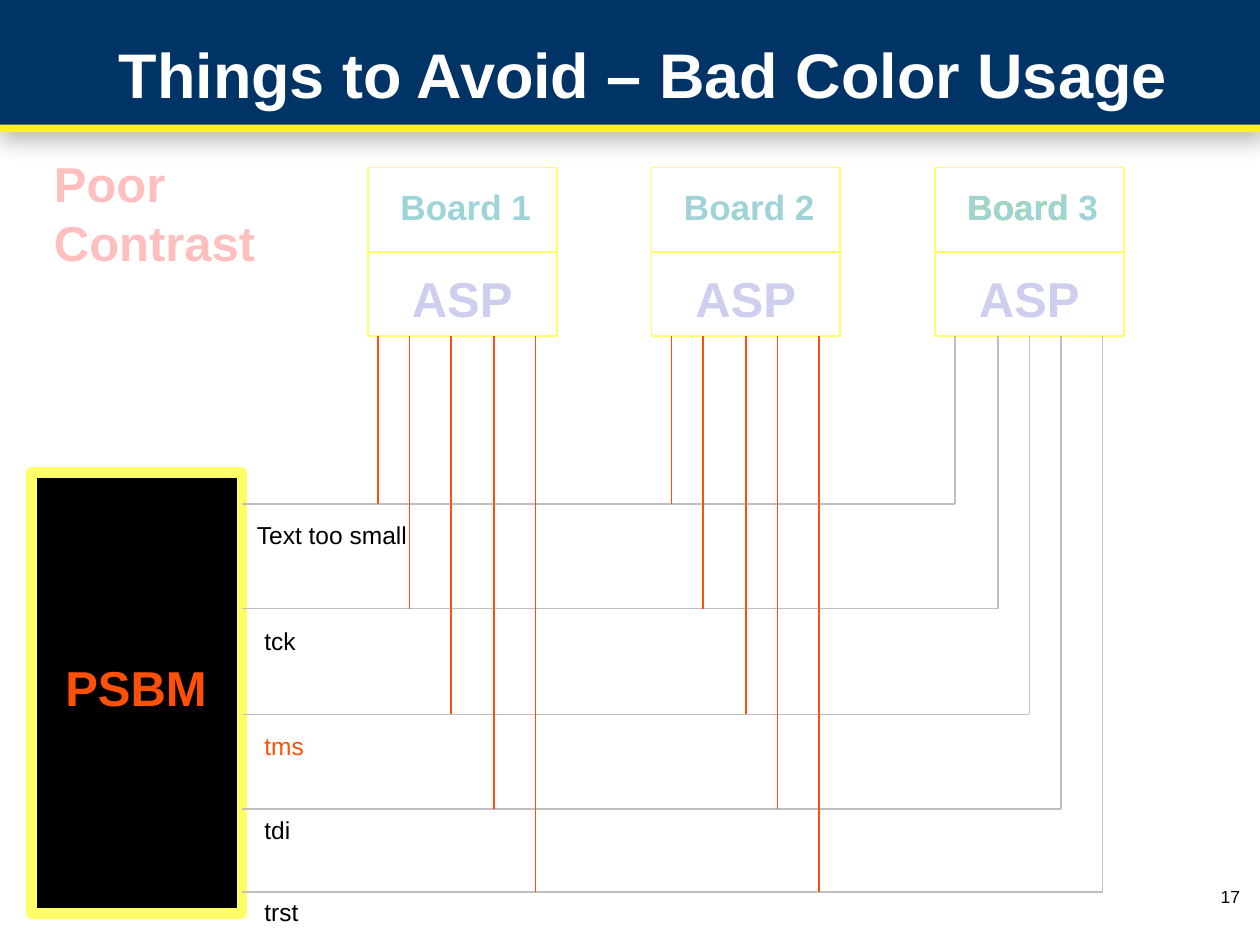
from dataclasses import dataclass

from lxml import etree
from pptx import Presentation
from pptx import util as u
from pptx.dml.color import RGBColor
from pptx.enum import shapes, text
from pptx.oxml import ns, parse_xml

In = u.Inches


@dataclass(frozen=True)
class Theme:
    font: str = "Arial"
    navy: str = "003466"
    gold: str = "FBED30"
    yellow: str = "FFFF66"
    orange: str = "FF5008"
    grey: str = "BFBFBF"
    teal: str = "9ED3D7"
    green: str = "99CC00"
    lilac: str = "CECEEF"
    pink: str = "FFBFBF"
    black: str = "000000"
    white: str = "FFFFFF"
    title: int = 36
    head: int = 28
    name: int = 20
    label: int = 14
    page: int = 10


T = Theme()
ALIGN = text.PP_ALIGN

# Signal name, label left, label top, label colour, bus height
SIGNALS = [
    ("Text too small", 1.94, 4.08, T.black, 4),
    ("tck", 2, 4.92, T.black, 4.83),
    ("tms", 2, 5.75, T.orange, 5.67),
    ("tdi", 2, 6.42, T.black, 6.42),
    ("trst", 2, 7.07, T.black, 7.08),
]
# Board left edge, wire colour, wire positions
BOARDS = [
    (2.92, T.orange, (3, 3.25, 3.58, 3.92, 4.25)),
    (5.17, T.orange, (5.33, 5.58, 5.92, 6.17, 6.5)),
    (7.42, T.grey, (7.58, 7.92, 8.17, 8.42, 8.75)),
]
BUS_LEFT = 1.92
TOP, CELL_W, CELL_H = 1.33, 1.5, 0.67
WIRE_TOP = TOP + 2 * CELL_H

SHADOW = (
    f'<a:effectLst {ns.nsdecls("a")}><a:outerShdw blurRad="{u.Pt(12)}" '
    f'dist="{u.Pt(8)}" dir="5400000" algn="t" rotWithShape="0">'
    '<a:srgbClr val="A6A6A6"><a:alpha val="78000"/></a:srgbClr>'
    "</a:outerShdw></a:effectLst>"
)


def rgb(code):
    return RGBColor.from_string(code)


def write(frame, words, size, color, bold=False, align=ALIGN.LEFT):
    frame.word_wrap = True
    para = frame.paragraphs[0]
    para.alignment = align
    run = para.add_run()
    run.text = words
    font = run.font
    font.name, font.size, font.bold = T.font, u.Pt(size), bold
    font.color.rgb = rgb(color)


def add_text(slide, x, y, w, h, words, size, color, bold=False, align=ALIGN.LEFT):
    box = slide.shapes.add_textbox(In(x), In(y), In(w), In(h))
    write(box.text_frame, words, size, color, bold, align)


def add_rect(slide, x, y, w, h, fill=None, line=None, width=1):
    rect = slide.shapes.add_shape(
        shapes.MSO_SHAPE.RECTANGLE, In(x), In(y), In(w), In(h))
    rect.shadow.inherit = False
    if fill:
        rect.fill.solid()
        rect.fill.fore_color.rgb = rgb(fill)
    else:
        rect.fill.background()
    if line:
        rect.line.color.rgb = rgb(line)
        rect.line.width = u.Pt(width)
    else:
        rect.line.fill.background()
    return rect


def add_line(slide, x1, y1, x2, y2, color):
    line = slide.shapes.add_connector(
        shapes.MSO_CONNECTOR.STRAIGHT, In(x1), In(y1), In(x2), In(y2))
    line.line.color.rgb = rgb(color)
    line.line.width = u.Pt(1)
    etree.SubElement(line._element.spPr, ns.qn("a:effectLst"))


def add_header(slide):
    band = add_rect(slide, 0, 0, 10.03, 1, T.navy)
    props = band._element.spPr
    props.replace(props.find(ns.qn("a:effectLst")), parse_xml(SHADOW))
    add_rect(slide, 0, 0.99, 10.03, 0.06, T.gold)

    title = slide.shapes.title
    title.left, title.top = In(0.21), In(0.11)
    title.width, title.height = In(9.79), In(0.94)
    title.text_frame.vertical_anchor = text.MSO_ANCHOR.MIDDLE
    write(title.text_frame, "Things to Avoid – Bad Color Usage",
          T.title, T.white, True, ALIGN.CENTER)
    slide.shapes._spTree.append(title._element)  # in front of the band


def add_board(slide, x):
    for row in range(2):
        add_rect(slide, x, TOP + row * CELL_H, CELL_W, CELL_H, line=T.yellow)
    add_text(slide, x + 0.25, 2.08, 1.08, 0.57, "ASP", T.head, T.lilac, True)


def add_name(slide, x, words, color):
    add_text(slide, x + 0.16, 1.42, 1.38, 0.44, words, T.name, color, True)


def add_wires(slide):
    ends = BOARDS[-1][2]
    for (*_, y), end in zip(SIGNALS, ends):
        add_line(slide, BUS_LEFT, y, end, y, T.grey)
    for _, color, wires in BOARDS:
        for x, (*_, y) in zip(wires, SIGNALS):
            add_line(slide, x, WIRE_TOP, x, y, color)


def main():
    prs = Presentation()
    prs.slide_width, prs.slide_height = In(10), In(7.5)
    slide = prs.slides.add_slide(prs.slide_layouts[5])
    add_header(slide)
    add_text(slide, 7.61, 6.98, 2.33, 0.52, "17", T.page, T.black,
             align=ALIGN.RIGHT)

    add_rect(slide, 0.25, 3.75, 1.67, 3.5, T.black, T.yellow, 6)
    add_text(slide, 0.42, 5.17, 1.33, 0.57, "PSBM", T.head, T.orange, True)

    add_name(slide, BOARDS[-1][0], "Board", T.green)
    for num, (x, *_) in enumerate(BOARDS, 1):
        add_board(slide, x)
        add_name(slide, x, f"Board {num}", T.teal)

    add_wires(slide)
    for words, x, y, color, _ in SIGNALS:
        add_text(slide, x, y, 1.42, 0.34, words, T.label, color)
    add_text(slide, 0.33, 1.17, 2.5, 1.03, "Poor Contrast", T.head, T.pink, True)
    prs.save("out.pptx")


if __name__ == "__main__":
    main()
